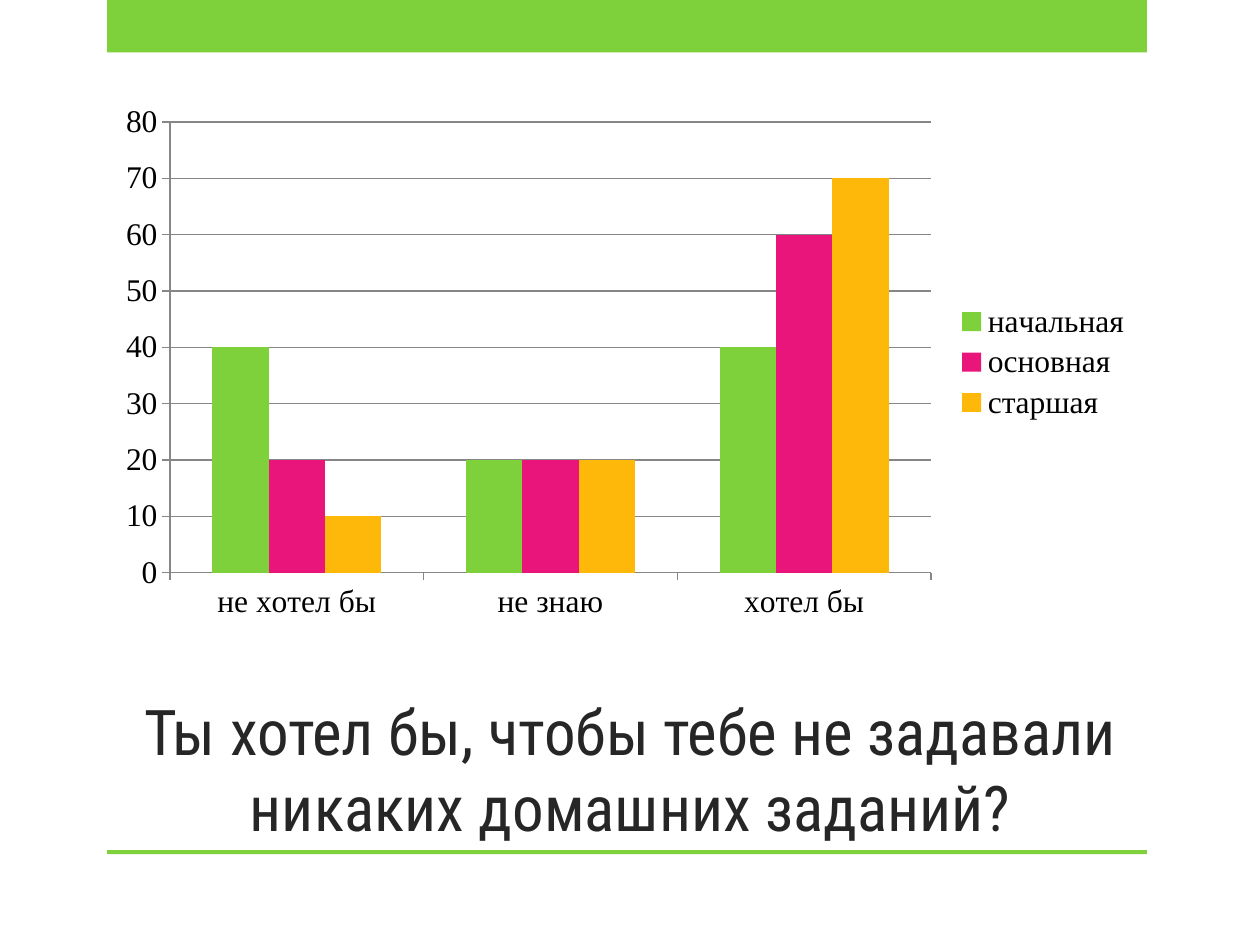
from pptx import Presentation
from pptx import util as u
from pptx.chart.data import CategoryChartData
from pptx.dml.color import RGBColor
from pptx.enum import chart as charts, shapes, text

GREEN, PINK, AMBER = "7FD13B", "EA157A", "FEB80A"
GRID, BLACK, DARK = "868686", "000000", "262626"


def rgb(value):
    return RGBColor.from_string(value)


def format_font(font, name, size, color):
    font.name = name
    font.size = u.Pt(size)
    font.bold = False
    font.color.rgb = rgb(color)


def write_text(frame, content, *, font, size, color, align, anchor):
    frame.word_wrap = True
    frame.auto_size = text.MSO_AUTO_SIZE.NONE
    frame.vertical_anchor = anchor
    paragraph = frame.paragraphs[0]
    paragraph.alignment = align
    run = paragraph.add_run()
    run.text = content
    format_font(run.font, font, size, color)


class SlideBuilder:
    title_font = "Roboto Condensed"
    chart_font = "Times New Roman"

    def __init__(self, presentation):
        self.slide = presentation.slides.add_slide(presentation.slide_layouts[5])

    def bar(self, left, top, width, height, color):
        shape = self.slide.shapes.add_shape(
            shapes.MSO_SHAPE.RECTANGLE, u.Cm(left), u.Cm(top), u.Cm(width), u.Cm(height))
        shape.shadow.inherit = False
        shape.fill.solid()
        shape.fill.fore_color.rgb = rgb(color)
        shape.line.fill.background()

    def title(self, content, left, top, width, height):
        title = self.slide.shapes.title
        title.left, title.top = u.Cm(left), u.Cm(top)
        title.width, title.height = u.Cm(width), u.Cm(height)
        write_text(title.text_frame, content, font=self.title_font, size=36, color=DARK,
                   align=text.PP_ALIGN.CENTER, anchor=text.MSO_ANCHOR.BOTTOM)

    def column_chart(self, left, top, width, height, categories, series):
        data = CategoryChartData()
        data.categories = categories
        for name, values, _ in series:
            data.add_series(name, values)
        chart = self.slide.shapes.add_chart(
            charts.XL_CHART_TYPE.COLUMN_CLUSTERED,
            u.Cm(left), u.Cm(top), u.Cm(width), u.Cm(height), data).chart
        format_font(chart.font, self.chart_font, 18, BLACK)
        chart.has_title = False
        chart.has_legend = True
        chart.legend.position = charts.XL_LEGEND_POSITION.RIGHT
        chart.legend.include_in_layout = False

        plot = chart.plots[0]
        plot.vary_by_categories = False
        plot.gap_width = 150
        plot.overlap = 0
        for column, (_, _, color) in zip(plot.series, series):
            column.format.fill.solid()
            column.format.fill.fore_color.rgb = rgb(color)

        value_axis = chart.value_axis
        value_axis.minimum_scale, value_axis.maximum_scale = 0, 80
        value_axis.major_unit = 10
        value_axis.has_major_gridlines = True
        for axis in (chart.category_axis, value_axis):
            axis.major_tick_mark = charts.XL_TICK_MARK.OUTSIDE
            axis.minor_tick_mark = charts.XL_TICK_MARK.NONE
        for lines in (chart.category_axis, value_axis, value_axis.major_gridlines):
            lines.format.line.color.rgb = rgb(GRID)
            lines.format.line.width = u.Pt(0.75)


def main():
    presentation = Presentation()
    presentation.slide_width, presentation.slide_height = u.Cm(25.4), u.Cm(19.05)
    builder = SlideBuilder(presentation)
    for top, height in ((0, 1.06), (17.14, 0.08)):
        builder.bar(2.16, top, 20.96, height, GREEN)
    builder.title("Ты хотел бы, чтобы тебе не задавали никаких домашних заданий?",
                  2.12, 12.7, 21.18, 4.44)
    builder.column_chart(
        2.12, 1.9, 20.96, 10.8,
        ("не хотел бы", "не знаю", "хотел бы"),
        (("начальная", (40, 20, 40), GREEN),
         ("основная", (20, 20, 60), PINK),
         ("старшая", (10, 20, 70), AMBER)))
    presentation.save("out.pptx")


if __name__ == "__main__":
    main()
